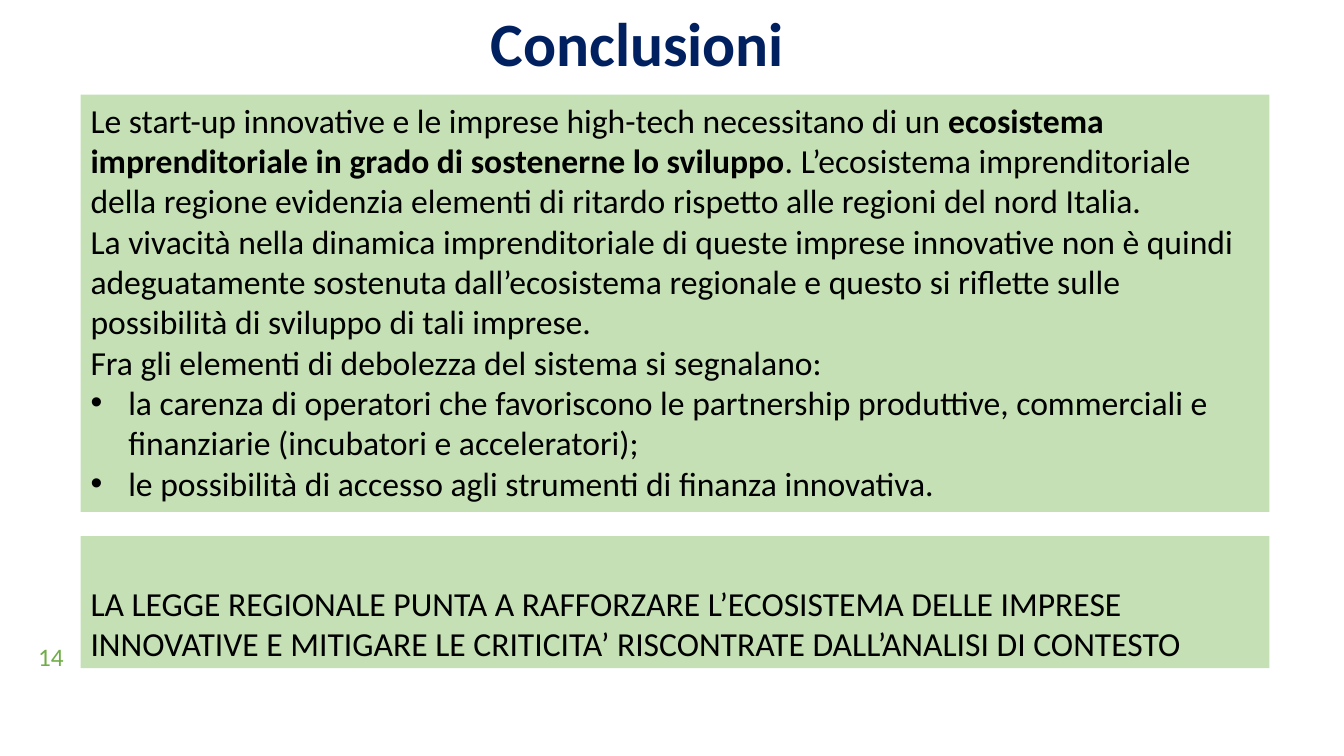
"""Build the closing slide on innovative start-ups and the regional ecosystem."""
from lxml import etree
from pptx import Presentation
from pptx import util as u
from pptx.dml.color import RGBColor
from pptx.enum import shapes, text
from pptx.oxml.ns import qn

HUES = {"navy": "002060", "leaf": "70AD47", "pale": "C5E0B4", "ink": "000000"}

deck = Presentation()
deck.slide_width, deck.slide_height = u.Inches(13.33), u.Inches(7.5)
col, row = deck.slide_width / 100, deck.slide_height / 100
slide = deck.slides.add_slide(deck.slide_layouts[6])


def place(x, y, wide, high, hue=None):
    spot = [int(n) for n in (x * col, y * row, wide * col, high * row)]
    if hue is None:
        box = slide.shapes.add_textbox(*spot)
    else:
        box = slide.shapes.add_shape(shapes.MSO_SHAPE.RECTANGLE, *spot)
        box.shadow.inherit = False
        box.fill.solid()
        box.fill.fore_color.rgb = RGBColor.from_string(HUES[hue])
        box.line.fill.background()
    box.text_frame.word_wrap = True
    return box.text_frame


def style(frame, size, hue, align=text.PP_ALIGN.LEFT):
    for para in frame.paragraphs:
        para.alignment = align
        for run in para.runs:
            run.font.name, run.font.size = "Calibri", u.Pt(size)
            run.font.color.rgb = RGBColor.from_string(HUES[hue])


title = place(-3.3, -3.87, 101.5, 24)
title.text = "Conclusioni"
title.vertical_anchor = text.MSO_ANCHOR.BOTTOM
title.margin_bottom = int(9.6 * row)
title.paragraphs[0].line_spacing = 0.9
style(title, 44, "navy", text.PP_ALIGN.CENTER)
title.paragraphs[0].runs[0].font.bold = True

page = place(2.1, 84.13, 3.68, 5.33)
page.text = "14"
style(page, 18, "leaf")

main = place(6, 12.53, 88.45, 55.2, "pale")
main.vertical_anchor = text.MSO_ANCHOR.TOP
main.text = "\n".join([
    "Le start-up innovative e le imprese high-tech necessitano di un ",
    "La vivacità nella dinamica imprenditoriale di queste imprese innovative non è quindi "
    "adeguatamente sostenuta dall’ecosistema regionale e questo si riflette sulle "
    "possibilità di sviluppo di tali imprese.",
    "Fra gli elementi di debolezza del sistema si segnalano:",
    "la carenza di operatori che favoriscono le partnership produttive, commerciali e "
    "finanziarie (incubatori e acceleratori);",
    "le possibilità di accesso agli strumenti di finanza innovativa.",
])
lead = main.paragraphs[0]
strong, rest = lead.add_run(), lead.add_run()
strong.text = "ecosistema imprenditoriale in grado di sostenerne lo sviluppo"
strong.font.bold = True
rest.text = (". L’ecosistema imprenditoriale della regione evidenzia elementi di ritardo "
             "rispetto alle regioni del nord Italia.")
for item in main.paragraphs[3:]:
    props = item._p.get_or_add_pPr()
    dent = int(2.81 * col)
    props.set("marL", str(dent))
    props.set("indent", str(-dent))
    etree.SubElement(props, qn("a:buFont")).set("typeface", "Arial")
    etree.SubElement(props, qn("a:buChar")).set("char", "•")
style(main, 24, "ink")

law = place(6, 70.93, 88.45, 17.47, "pale")
law.vertical_anchor = text.MSO_ANCHOR.BOTTOM
law.text = ("LA LEGGE REGIONALE PUNTA A RAFFORZARE L’ECOSISTEMA DELLE IMPRESE INNOVATIVE "
            "E MITIGARE LE CRITICITA’ RISCONTRATE DALL’ANALISI DI CONTESTO")
style(law, 24, "ink")

deck.save("out.pptx")
